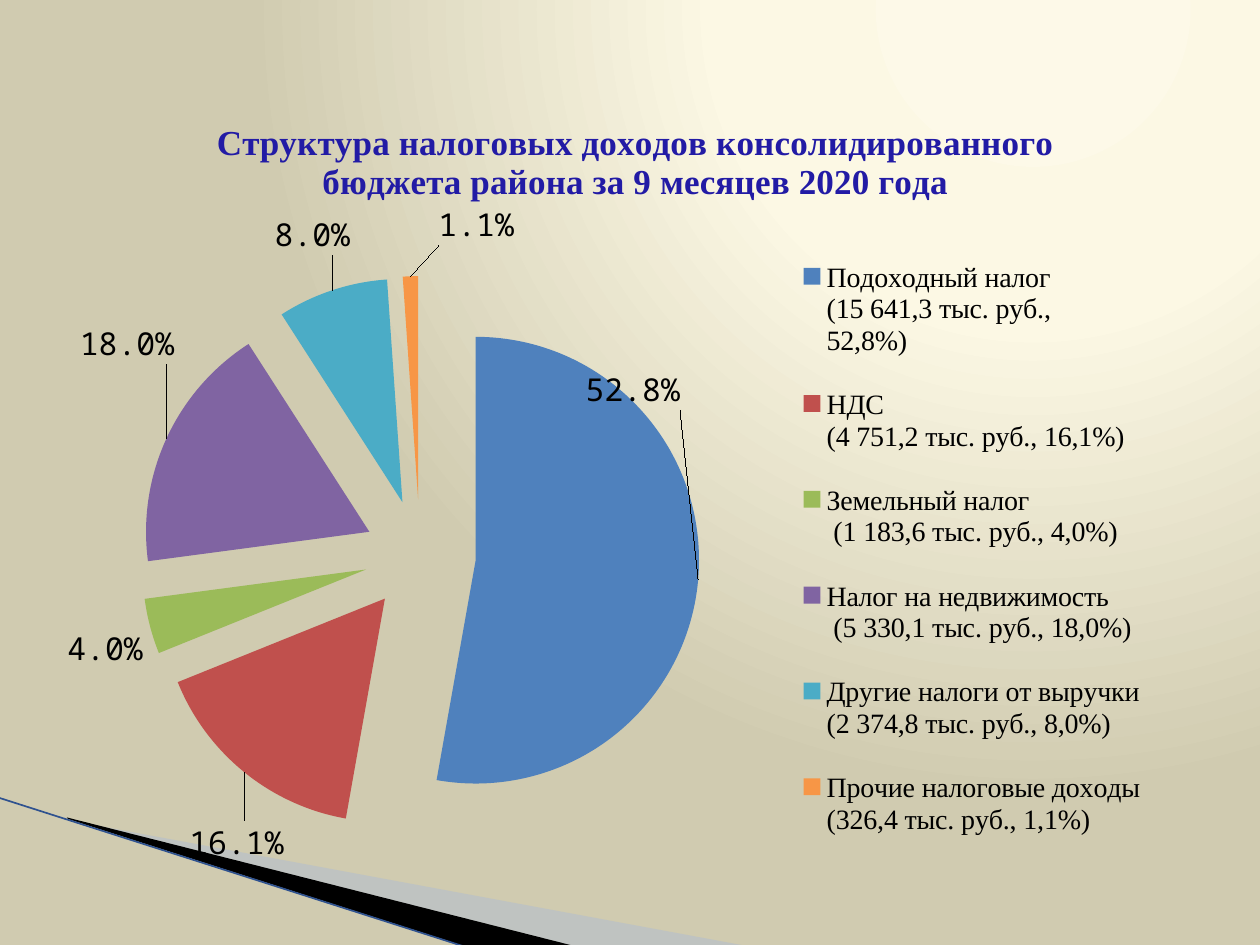
import pptx
import pptx.chart.data
import pptx.dml.color
import pptx.enum.chart
import pptx.enum.shapes
import pptx.oxml
import pptx.oxml.ns
import pptx.util
from lxml import etree
from pptx.util import Cm

SERIF = "Times New Roman"
MONO = "Noto Sans Mono"
TITLE = "Структура налоговых доходов консолидированного бюджета района за 9 месяцев 2020 года"
# Tax and amount, share, slice colour, label offset in percent of the chart
TAXES = [
    ("Подоходный налог\n(15 641,3 тыс. руб.,\n52,8%)", 0.528, "4F81BD", (-10, -27.5)),
    ("НДС\n(4 751,2 тыс. руб., 16,1%)", 0.161, "C0504D", (3.7, 5.5)),
    ("Земельный налог\n (1 183,6 тыс. руб., 4,0%)", 0.04, "9BBB59", (0, -0.3)),
    ("Налог на недвижимость\n (5 330,1 тыс. руб., 18,0%)", 0.18, "8064A2", (1.2, -9.1)),
    ("Другие налоги от выручки\n(2 374,8 тыс. руб., 8,0%)", 0.08, "4BACC6", (1.7, -3.6)),
    ("Прочие налоговые доходы\n(326,4 тыс. руб., 1,1%)", 0.011, "F79646", (5.5, -3)),
]


def rgb(hex_colour):
    return pptx.dml.color.RGBColor.from_string(hex_colour)


def sub(parent, tag, **attributes):
    return etree.SubElement(parent, pptx.oxml.ns.qn(tag), attributes)


def style_font(font, name, size, colour="000000", bold=False):
    font.name = name
    font.size = pptx.util.Pt(size)
    font.bold = bold
    font.color.rgb = rgb(colour)


def paint_background(slide):
    """Radial gradient with its light centre at the top right."""
    slide.background.fill.gradient()
    gradient = slide.element.xpath(".//a:gradFill")[0]
    for child in list(gradient):
        gradient.remove(child)
    stops = sub(gradient, "a:gsLst")
    for position, colour in [(0, "FDF9E8"), (40, "FCF8E4"), (100, "D0CBB0")]:
        sub(sub(stops, "a:gs", pos=str(position * 1000)), "a:srgbClr", val=colour)
    circle = sub(gradient, "a:path", path="circle")
    sub(circle, "a:fillToRect", l="65000", t="0", r="0", b="98000")


def add_wedge(slide, points, colour, alpha=None):
    corners = [(Cm(x), Cm(y)) for x, y in points]
    builder = slide.shapes.build_freeform(*corners[0])
    builder.add_line_segments(corners[1:], close=True)
    wedge = builder.convert_to_shape()
    wedge.shadow.inherit = False
    wedge.fill.solid()
    wedge.fill.fore_color.rgb = rgb(colour)
    wedge.line.fill.background()
    if alpha:
        sub(wedge.element.spPr.xpath("./a:solidFill/a:srgbClr")[0],
            "a:alpha", val=str(alpha * 1000))


def add_edge_line(slide, start, end, colour, width):
    edge = slide.shapes.add_connector(
        pptx.enum.shapes.MSO_CONNECTOR.STRAIGHT, *map(Cm, start + end))
    edge.line.color.rgb = rgb(colour)
    edge.line.width = pptx.util.Pt(width)
    sub(edge.element.spPr, "a:effectLst")


def place(part, index, target=None, from_edge=True, **percents):
    """Give a chart part a manual layout, as its child number index."""
    for old in part.xpath("./c:layout"):
        part.remove(old)
    layout = pptx.oxml.parse_xml(f"<c:layout {pptx.oxml.ns.nsdecls('c')}/>")
    part.insert(index, layout)
    manual = sub(layout, "c:manualLayout")
    if target:
        sub(manual, "c:layoutTarget", val=target)
    if from_edge:
        sub(manual, "c:xMode", val="edge")
        sub(manual, "c:yMode", val="edge")
    for key, percent in percents.items():
        sub(manual, f"c:{key}", val=f"{percent / 100:.4f}")
    return layout


def add_chart_title(chart):
    frame = chart.chart_title.text_frame
    frame.text = TITLE
    style_font(frame.paragraphs[0].runs[0].font, SERIF, 20, "221BA5", bold=True)
    place(chart.element.xpath("./c:chart/c:title")[0], 1, x=14.6, y=2.3)


def add_chart_legend(chart):
    chart.has_legend = True
    legend = chart.legend
    legend.position = pptx.enum.chart.XL_LEGEND_POSITION.RIGHT
    legend.include_in_layout = False
    style_font(legend.font, SERIF, 16)
    place(chart.element.xpath("./c:chart/c:legend")[0], 1, x=62, y=17.3, w=32, h=82.6)


def style_slices(series):
    best_fit = pptx.enum.chart.XL_LABEL_POSITION.BEST_FIT
    labels = series.data_labels
    labels.show_value = True
    labels.number_format = "0.0%"
    labels.number_format_is_linked = False
    labels.position = best_fit
    style_font(labels.font, MONO, 18)
    for index, (_, _, colour, (dx, dy)) in enumerate(TAXES):
        point = series.points[index]
        point.format.fill.solid()
        point.format.fill.fore_color.rgb = rgb(colour)
        point.data_label.position = best_fit
        style_font(point.data_label.font, MONO, 18)
        label = series.data_labels._element.xpath(f"./c:dLbl[c:idx/@val='{index}']")[0]
        layout = place(label, 1, from_edge=False, x=dx, y=dy)
        layout.addnext(layout.makeelement(
            pptx.oxml.ns.qn("c:numFmt"), {"formatCode": "0.0%", "sourceLinked": "0"}))


def explode(series, percent):
    explosion = pptx.oxml.parse_xml(
        f'<c:explosion {pptx.oxml.ns.nsdecls("c")} val="{percent}"/>')
    series._element.xpath("./c:dPt | ./c:dLbls | ./c:cat")[0].addprevious(explosion)


def add_tax_pie(slide):
    shares = pptx.chart.data.CategoryChartData(number_format="0.0%")
    shares.categories = [tax[0] for tax in TAXES]
    shares.add_series("Series 1", [tax[1] for tax in TAXES])
    chart = slide.shapes.add_chart(
        pptx.enum.chart.XL_CHART_TYPE.PIE,
        Cm(0.71), Cm(1.93), Cm(24.21), Cm(15.6), shares).chart
    style_font(chart.font, MONO, 18)
    chart.plots[0].vary_by_categories = True
    add_chart_title(chart)
    add_chart_legend(chart)
    series = chart.plots[0].series[0]
    explode(series, 25)
    style_slices(series)
    place(chart.element.xpath("./c:chart/c:plotArea")[0], 0, "inner",
          x=8.8, y=23, w=46.5, h=72.8)


def main():
    deck = pptx.Presentation()
    deck.slide_width, deck.slide_height = Cm(25.4), Cm(19.05)
    slide = deck.slides.add_slide(deck.slide_layouts[6])
    paint_background(slide)
    add_wedge(slide, [(1.4, 16.54), (15.11, 19.08), (11.58, 19.08), (1.4, 16.51)],
              "A7B9DB", alpha=40)
    add_wedge(slide, [(1.35, 16.48), (11.61, 19.08), (9.45, 19.1), (1.37, 16.51)], "000000")
    add_edge_line(slide, (-0.03, 16.08), (9.42, 19.1), "2F528F", 0.95)
    add_tax_pie(slide)
    deck.save("out.pptx")


if __name__ == "__main__":
    main()
